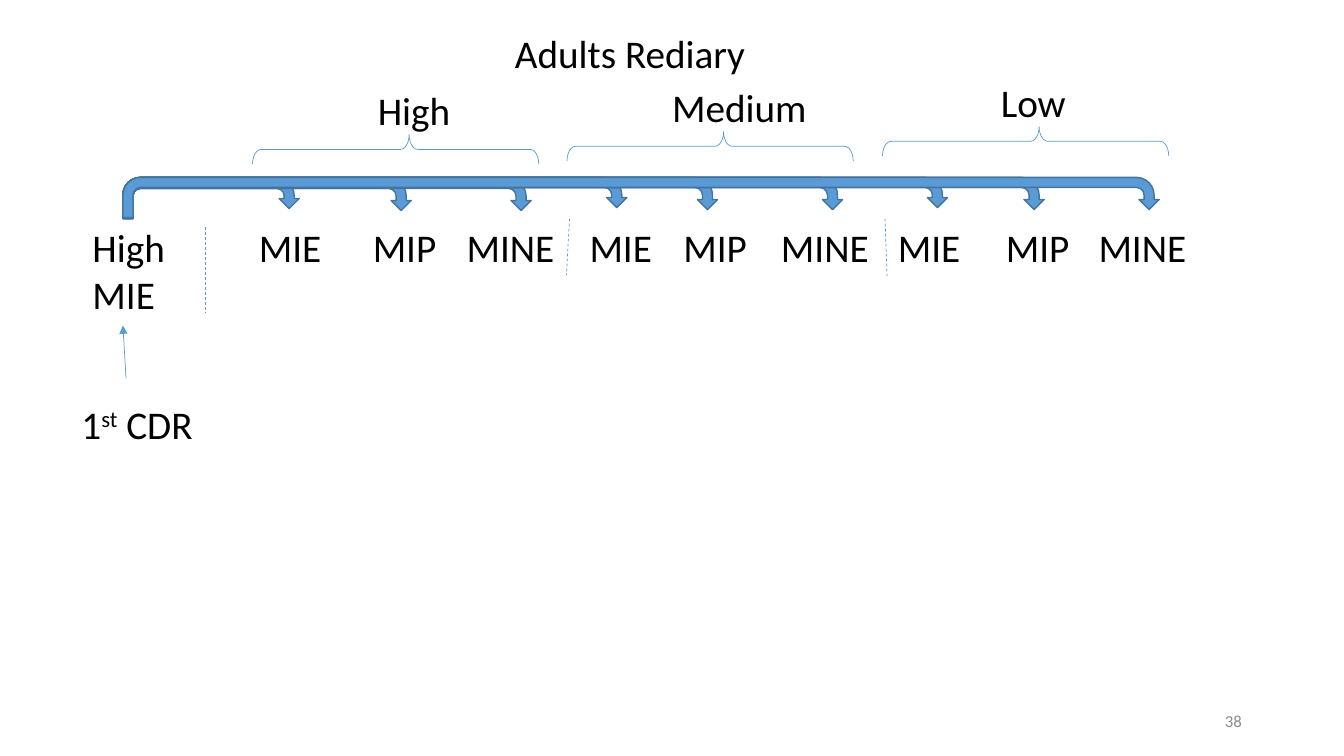
from lxml import etree
from pptx import Presentation
from pptx.dml.color import RGBColor
from pptx.enum.dml import MSO_LINE
from pptx.enum.shapes import MSO_CONNECTOR, MSO_SHAPE
from pptx.enum.text import MSO_ANCHOR, MSO_AUTO_SIZE, PP_ALIGN
from pptx.oxml.ns import qn
from pptx.util import Pt

STRAIGHT = MSO_CONNECTOR.STRAIGHT
DASH = MSO_LINE.DASH
UTURN, BRACE = MSO_SHAPE.U_TURN_ARROW, MSO_SHAPE.RIGHT_BRACE
TOP, MIDDLE, BOTTOM = MSO_ANCHOR.TOP, MSO_ANCHOR.MIDDLE, MSO_ANCHOR.BOTTOM
LEFT, CENTER, RIGHT = PP_ALIGN.LEFT, PP_ALIGN.CENTER, PP_ALIGN.RIGHT
GROW, FIXED = MSO_AUTO_SIZE.SHAPE_TO_FIT_TEXT, MSO_AUTO_SIZE.NONE

COLORS = {"text": "000000", "number": "8C8C8C", "blue": "5B9BD5", "edge": "43739E"}
LABEL_HEIGHT = 41
BRACE_WIDTH, BRACE_HEIGHT = 204.5, 21
STEM_LEFT, STEM_HEIGHT = 87.8, 28.8
WIDE_TURN = (0.25, 0.25, 0.25, 0.438, 0.8)
SHORT_TURN = (0.25, 0.25, 0.25, 0.4375, 0.75)

GROUPS = [
    {"name": "High", "box": (180.4, 96.2), "name_at": (82.4, 93), "stem_top": 127.4,
     "tips": (213.8, 293.8, 379.4), "turns": (SHORT_TURN, WIDE_TURN, WIDE_TURN),
     "labels": (("MIE", 177.8, 62), ("MIP", 259.2, 61.2), ("MINE", 326.2, 78)),
     "divider": (146.9, 162, 146.9, 223.9)},
    {"name": "Medium", "box": (405, 94), "name_at": (68, 111.6), "stem_top": 126.7,
     "tips": (447.8, 512.6, 601.9), "turns": (SHORT_TURN, WIDE_TURN, WIDE_TURN),
     "labels": (("MIE", 414, 65), ("MIP", 481, 70.6), ("MINE", 550.8, 83.5)),
     "divider": (406.8, 156.2, 404.6, 196.6)},
    {"name": "Low", "box": (630.4, 90.4), "name_at": (77.4, 93), "stem_top": 126.7,
     "tips": (676.8, 745.9, 828), "turns": (SHORT_TURN, WIDE_TURN, WIDE_TURN),
     "labels": (("MIE", 634.3, 70.6), ("MIP", 711.4, 70.6), ("MINE", 777.6, 83.5)),
     "divider": (632.2, 156.2, 633.6, 197.3)},
]


def add_text(slide, box, runs, size=28, color="text", align=LEFT, anchor=TOP, fit=GROW, spacing=1.0):
    """Add a text box whose runs are (text, baseline) pairs."""
    shape = slide.shapes.add_textbox(*map(Pt, box))
    frame = shape.text_frame
    for name, value in {"word_wrap": True, "auto_size": fit, "vertical_anchor": anchor}.items():
        setattr(frame, name, value)
    paragraph = frame.paragraphs[0]
    paragraph.alignment = align
    paragraph.line_spacing = spacing
    for text, baseline in runs:
        run = paragraph.add_run()
        run.text = text
        for name, value in {"name": "Calibri", "size": Pt(size)}.items():
            setattr(run.font, name, value)
        run.font.color.rgb = RGBColor.from_string(COLORS[color])
        if baseline:
            run.font._element.set("baseline", str(baseline))


def add_shape(slide, kind, box, adjustments, edge, width, fill=None):
    """Add a preset shape with its outline and optional fill."""
    shape = slide.shapes.add_shape(kind, *map(Pt, box))
    shape.shadow.inherit = False
    for index, value in enumerate(adjustments):
        shape.adjustments[index] = value
    shape.line.color.rgb = RGBColor.from_string(COLORS[edge])
    shape.line.width = Pt(width)
    if fill:
        shape.fill.solid()
        shape.fill.fore_color.rgb = RGBColor.from_string(COLORS[fill])
    else:
        shape.fill.background()
    return shape


def add_line(slide, ends):
    """Add a thin blue line without a shadow."""
    connector = slide.shapes.add_connector(STRAIGHT, *map(Pt, ends))
    connector.line.color.rgb = RGBColor.from_string(COLORS["blue"])
    connector.line.width = Pt(0.5)
    etree.SubElement(connector._element.spPr, qn("a:effectLst"))
    return connector


def add_start(slide, left, top):
    """Add the starting level and the arrow that leads to it from the first CDR."""
    add_text(slide, (left, top, 108, 75), [("High MIE", None)])
    arrow = add_line(slide, (left + 31, top + 113.8, left + 28.8, top + 76.3))
    etree.SubElement(arrow.line._get_or_add_ln(), qn("a:tailEnd"), type="triangle")
    add_text(slide, (left - 7.9, top + 126, 108, LABEL_HEIGHT),
             [("1", None), ("st", 30000), (" CDR", None)])


def add_group(slide, group):
    """Add one level: its name, brace, branching arrows, labels and divider."""
    left, top = group["box"]
    offset, width = group["name_at"]
    for tip, turn in zip(group["tips"], group["turns"]):
        box = (STEM_LEFT, group["stem_top"], tip - STEM_LEFT, STEM_HEIGHT)
        add_shape(slide, UTURN, box, turn, "edge", 1, "blue")
    for label, label_left, label_width in group["labels"]:
        add_text(slide, (label_left, 156, label_width, LABEL_HEIGHT), [(label, None)])
    add_text(slide, (left + offset, top - 38, width, LABEL_HEIGHT), [(group["name"], None)])
    inset = (BRACE_WIDTH - BRACE_HEIGHT) / 2
    box = (left + inset, top - inset, BRACE_HEIGHT, BRACE_WIDTH)
    brace = add_shape(slide, BRACE, box, (0.292, 0.453), "blue", 0.5)
    brace.rotation = 90
    brace._element.spPr.xfrm.set("flipH", "1")
    add_line(slide, group["divider"]).line.dash_style = DASH


def main():
    """Build the slide and save it."""
    presentation = Presentation()
    presentation.slide_width, presentation.slide_height = Pt(960), Pt(540)
    slide = presentation.slides.add_slide(presentation.slide_layouts[6])
    add_text(slide, (90, 19.4, 720, 38.9), [("Adults Rediary", None)],
             align=CENTER, anchor=BOTTOM, fit=FIXED, spacing=0.9)
    add_start(slide, 59, 156.2)
    for group in GROUPS:
        add_group(slide, group)
    add_text(slide, (678.2, 500.4, 216, 28.8), [("38", None)], size=12,
             color="number", align=RIGHT, anchor=MIDDLE, fit=FIXED)
    presentation.save("out.pptx")


if __name__ == "__main__":
    main()
